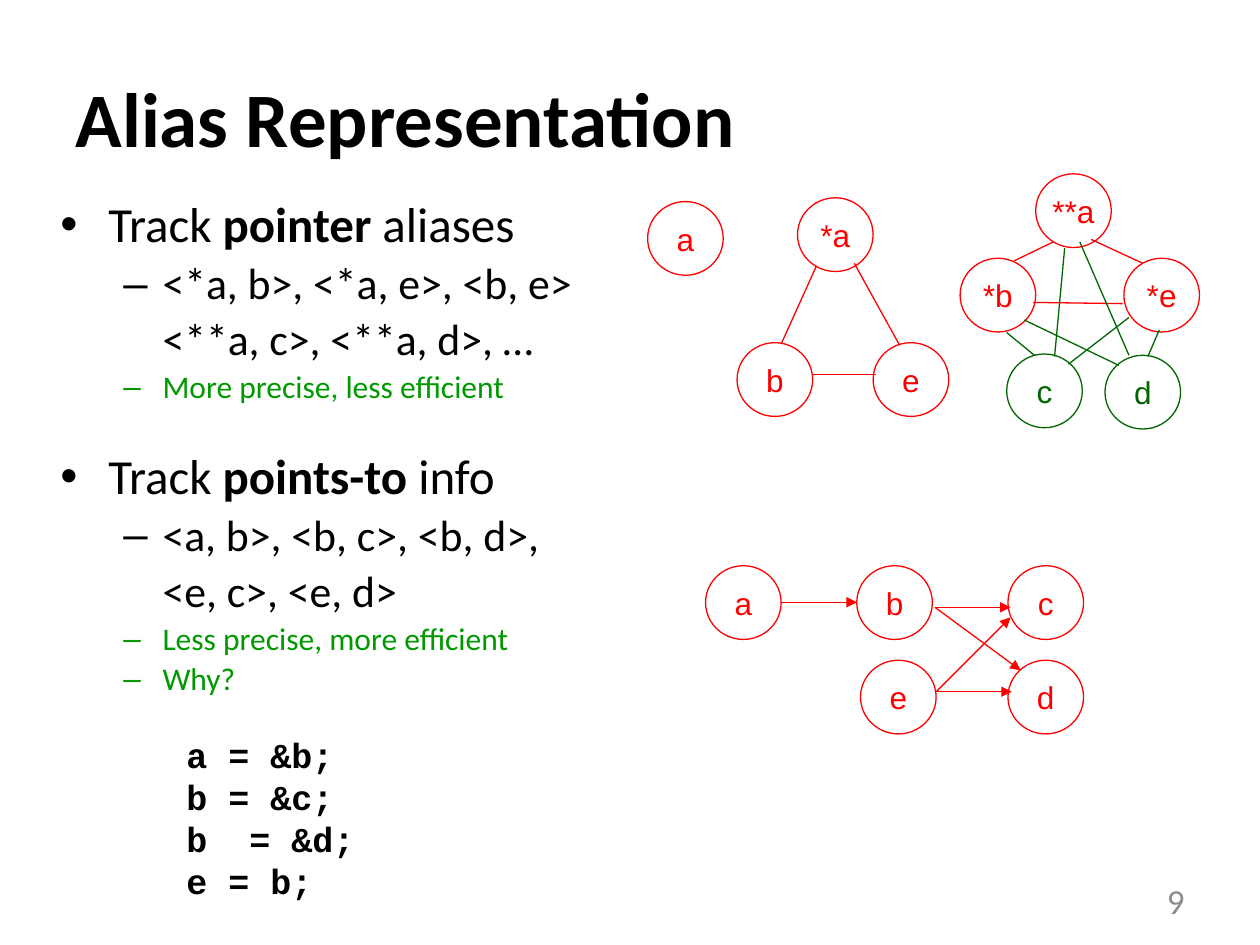
from typing import NamedTuple

from lxml import etree
from pptx import Presentation
from pptx.dml.color import RGBColor
from pptx.enum.shapes import MSO_CONNECTOR, MSO_SHAPE
from pptx.enum.text import MSO_ANCHOR, MSO_AUTO_SIZE, PP_ALIGN
from pptx.oxml.ns import qn
from pptx.util import Inches, Pt

LINE, OVAL = MSO_CONNECTOR.STRAIGHT, MSO_SHAPE.OVAL
TOP, MID = MSO_ANCHOR.TOP, MSO_ANCHOR.MIDDLE
LEFT, MIDST, RIGHT = PP_ALIGN.LEFT, PP_ALIGN.CENTER, PP_ALIGN.RIGHT
FIXED = MSO_AUTO_SIZE.NONE

RED, GREEN, LIME = "FF0000", "006600", "009900"
BLACK, GREY = "000000", "8C8C8C"
WIDE, HIGH = 6, 5.85  # node size in grid cells


class Node(NamedTuple):
    text: str
    col: float
    row: float
    hue: str = RED


class Edge(NamedTuple):
    start: tuple[float, float]
    end: tuple[float, float]
    hue: str = RED


class Item(NamedTuple):
    runs: list[tuple[str, bool]]
    size: float
    level: int = 1
    mark: str = "–"
    hue: str = BLACK
    gap: float = 0  # extra space above, in points


def cell(count: float) -> int:
    """Length on a grid of 100 columns by 75 rows."""
    return Inches(count / 10)


def tint(code: str) -> RGBColor:
    return RGBColor.from_string(code)


def put(thing, **values) -> None:
    for key, value in values.items():
        setattr(thing, key, value)


def place(shape, col: float, row: float, wide: float, high: float) -> None:
    put(shape, left=cell(col), top=cell(row), width=cell(wide), height=cell(high))


def write(para, text: str, size: float, face: str, hue: str, bold: bool = False) -> None:
    run = para.add_run()
    run.text = text
    put(run.font, size=Pt(size), name=face, bold=bold)
    run.font.color.rgb = tint(hue)


def draw_node(shapes, node: Node) -> None:
    oval = shapes.add_shape(OVAL, cell(node.col), cell(node.row), cell(WIDE), cell(HIGH))
    oval.shadow.inherit = False
    oval.fill.background()
    oval.line.color.rgb = tint(node.hue)
    oval.line.width = Pt(0.75)
    put(oval.text_frame, word_wrap=False, vertical_anchor=MID)
    para = oval.text_frame.paragraphs[0]
    para.alignment = MIDST
    write(para, node.text, 18, "Arial", node.hue)


def draw_edge(shapes, edge: Edge, arrow: bool) -> None:
    line = shapes.add_connector(LINE, *map(cell, edge.start + edge.end))
    line.line.color.rgb = tint(edge.hue)
    line.line.width = Pt(0.75)
    props = line._element.spPr
    if arrow:
        etree.SubElement(props.find(qn("a:ln")), qn("a:tailEnd"), type="triangle")
    etree.SubElement(props, qn("a:effectLst"))


def draw_graph(slide, nodes: list[Node], edges: list[Edge], arrow: bool = False) -> None:
    shapes = slide.shapes.add_group_shape().shapes
    for node in nodes:
        draw_node(shapes, node)
    for edge in edges:
        draw_edge(shapes, edge, arrow)


def add_item(para, item: Item) -> None:
    put(para, level=item.level, line_spacing=0.9, alignment=LEFT,
        space_before=Pt(item.size * 0.2 + item.gap))
    left, hang = (0.81, 0.31) if item.level else (0.38, 0.38)
    props = para._p.get_or_add_pPr()
    props.set("marL", str(Inches(left)))
    props.set("indent", str(-Inches(hang) if item.mark else 0))
    if item.mark:
        etree.SubElement(props, qn("a:buChar"), char=item.mark)
    else:
        etree.SubElement(props, qn("a:buNone"))
    for text, bold in item.runs:
        write(para, text, item.size, "Calibri", item.hue, bold)


def head(term: str, rest: str, gap: float = 0) -> Item:
    return Item([("Track ", False), (term, True), (rest, False)], 28, 0, "•", gap=gap)


def pairs(text: str, mark: str = "–") -> Item:
    return Item([(text, False)], 25, mark=mark)


def remark(text: str) -> Item:
    return Item([(text, False)], 18, hue=LIME)


ITEMS = [
    head("pointer", " aliases"),
    pairs("<*a, b>, <*a, e>, <b, e>"),
    pairs("<**a, c>, <**a, d>, …", ""),
    remark("More precise, less efficient"),
    head("points-to", " info", gap=21),
    pairs("<a, b>, <b, c>, <b, d>,"),
    pairs("<e, c>, <e, d>", ""),
    remark("Less precise, more efficient"),
    remark("Why?"),
]
CODE = ["a = &b;", "b = &c;", "b  = &d;", "e = b;"]

# Points-to graph: three even columns on the upper row
POINTS = [Node(name, 56 + 12 * i, 44.9) for i, name in enumerate("abc")]
POINTS += [Node("d", 80, 52.4), Node("e", 68.3, 52.4)]
FROM_B, FROM_E = (74.2, 48.2), (74.3, 54.9)
ARROWS = [
    Edge((62, 47.8), (68, 47.8)),
    Edge(FROM_B, (81, 53.2)), Edge(FROM_B, (80.2, 48.2)),
    Edge(FROM_E, (80.3, 54.9)), Edge(FROM_E, (80.2, 49)),
]

# Alias graphs
SMALL = [Node("b", 58.5, 27.2), Node("*a", 63.3, 15.7), Node("e", 69.3, 27.2)]
SIDES = [
    Edge((64.5, 29.7), (69.5, 29.7)),
    Edge((62, 27.3), (64.8, 21.1)),
    Edge((67.8, 20.9), (71.4, 27.4)),
]
LARGE = [
    Node("d", 87.7, 28.2, GREEN), Node("c", 79.9, 28.1, GREEN),
    Node("*b", 76.2, 20.5), Node("**a", 82.2, 13.8), Node("*e", 89.2, 20.5),
]
LINKS = [
    Edge((82, 24), (89.1, 24.1)),
    Edge((80.5, 20.7), (83.6, 19.2)),
    Edge((86.6, 19), (90.7, 20.9)),
    Edge((79.9, 26.4), (82.1, 28.2), GREEN),
    Edge((92, 26.2), (91.1, 28.3), GREEN),
    Edge((84.5, 19.7), (83.7, 28.3), GREEN),
    Edge((89.6, 25.2), (84.8, 28.9), GREEN),
    Edge((88.8, 29), (81.3, 25.4), GREEN),
    Edge((89.6, 28.2), (85.7, 19.2), GREEN),
]


def main() -> None:
    deck = Presentation()
    put(deck, slide_width=cell(100), slide_height=cell(75))
    slide = deck.slides.add_slide(deck.slide_layouts[1])
    title, body = slide.placeholders

    # Title
    place(title, 5, 3, 90, 12.5)
    put(title.text_frame, vertical_anchor=MID, auto_size=FIXED)
    para = title.text_frame.paragraphs[0]
    para.alignment = LEFT
    write(para, "Alias Representation", 44, "Calibri", BLACK, True)

    # Bullet list
    place(body, 3.8, 15.4, 90, 42.5)
    frame = body.text_frame
    put(frame, vertical_anchor=TOP, auto_size=FIXED)
    for i, item in enumerate(ITEMS):
        add_item(frame.add_paragraph() if i else frame.paragraphs[0], item)

    # Code lines
    frame = slide.shapes.add_textbox(*map(cell, (13.8, 57.7, 17.9, 14.3))).text_frame
    frame.word_wrap = True
    for i, text in enumerate(CODE):
        para = frame.add_paragraph() if i else frame.paragraphs[0]
        write(para, text, 20, "Courier New", BLACK, True)

    # Graphs
    draw_graph(slide, POINTS, ARROWS, arrow=True)
    draw_node(slide.shapes, Node("a", 51.4, 16))
    draw_graph(slide, SMALL, SIDES)
    draw_graph(slide, LARGE, LINKS)

    # Page number
    frame = slide.shapes.add_textbox(*map(cell, (71.7, 69.5, 23.3, 4))).text_frame
    put(frame, word_wrap=True, vertical_anchor=MID)
    para = frame.paragraphs[0]
    para.alignment = RIGHT
    write(para, "9", 20, "Calibri", GREY)

    deck.save("out.pptx")


if __name__ == "__main__":
    main()
